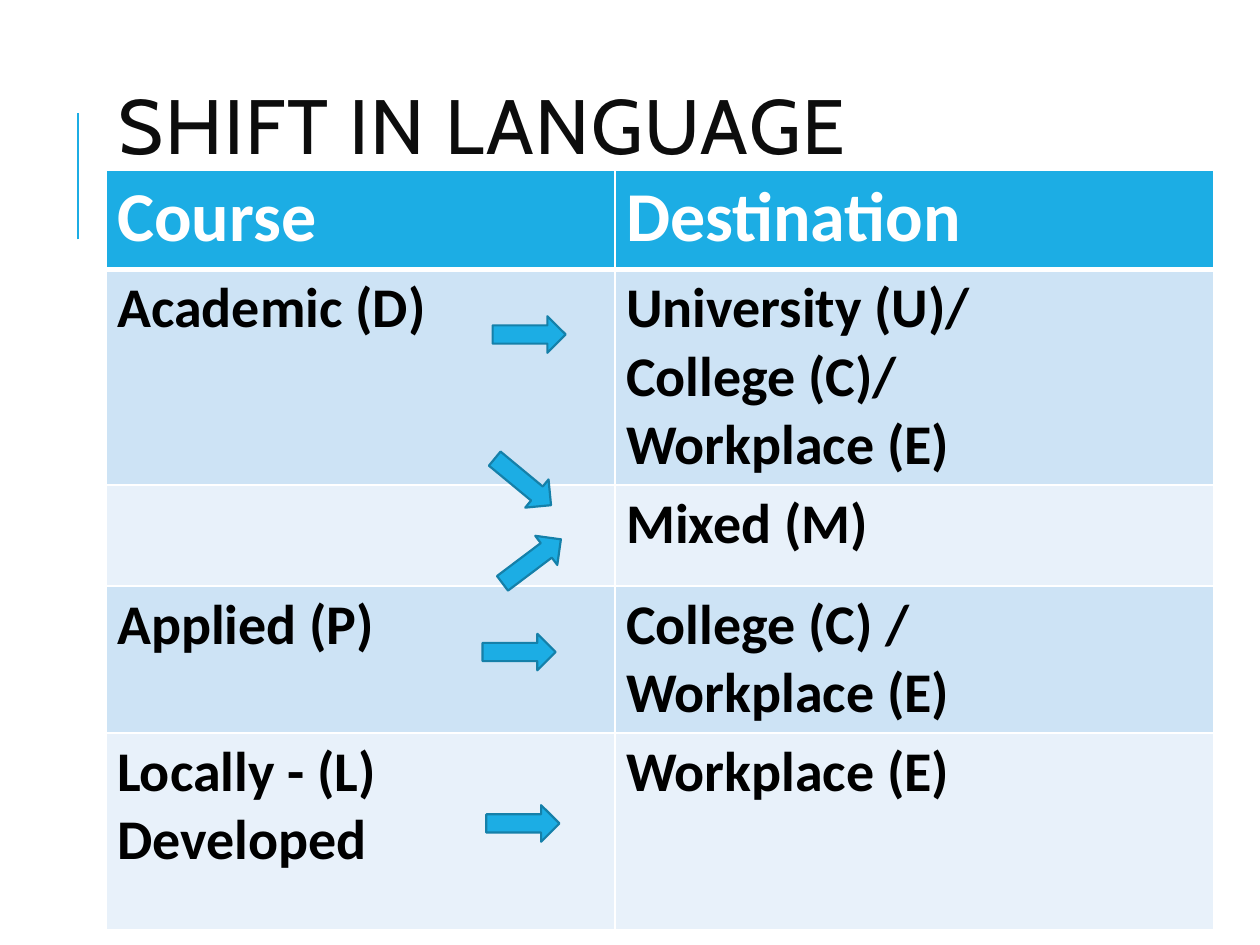
from dataclasses import dataclass

from lxml import etree
from pptx import Presentation
from pptx.dml.color import RGBColor
from pptx.enum.shapes import MSO_CONNECTOR, MSO_SHAPE
from pptx.enum.text import MSO_ANCHOR, PP_ALIGN
from pptx.oxml.ns import qn
from pptx.util import Inches, Pt

STRAIGHT = MSO_CONNECTOR.STRAIGHT
RIGHT_ARROW = MSO_SHAPE.RIGHT_ARROW
MIDDLE = MSO_ANCHOR.MIDDLE
LEFT = PP_ALIGN.LEFT
TITLE_ONLY = 5


@dataclass(frozen=True)
class Theme:
    accent: str = "1CADE4"
    arrow_outline: str = "1580A9"
    title_text: str = "0D0D0D"
    body_text: str = "000000"
    white: str = "FFFFFF"
    bands: tuple = ("CDE3F5", "E8F1FA")
    title_font: str = "Cabin"
    table_font: str = "Calibri"
    title_size: int = 44
    header_size: int = 40
    body_size: int = 32


class SlideBuilder:
    def __init__(self, slide, theme):
        self.slide = slide
        self.theme = theme

    def style_runs(self, paragraph, font, size, color, bold=False):
        for run in paragraph.runs:
            run.font.name = font
            run.font.size = Pt(size)
            run.font.bold = bold
            run.font.color.rgb = RGBColor.from_string(color)

    def title(self, text, left, top, width, height):
        shape = self.slide.shapes.title
        shape.left, shape.top = Inches(left), Inches(top)
        shape.width, shape.height = Inches(width), Inches(height)
        text_frame = shape.text_frame
        text_frame.text = text
        text_frame.word_wrap = True
        text_frame.vertical_anchor = MIDDLE
        paragraph = text_frame.paragraphs[0]
        paragraph.alignment = LEFT
        paragraph.line_spacing = 0.8
        self.style_runs(paragraph, self.theme.title_font,
                        self.theme.title_size, self.theme.title_text)
        for run in paragraph.runs:
            run.font._element.set("spc", "100")

    def rule(self, x, top, bottom):
        connector = self.slide.shapes.add_connector(
            STRAIGHT, Inches(x), Inches(bottom), Inches(x), Inches(top))
        connector.line.color.rgb = RGBColor.from_string(self.theme.accent)
        connector.line.width = Pt(1.5)
        etree.SubElement(connector._element.spPr, qn("a:effectLst"))

    def cell_borders(self, cell, bottom_width, top_width):
        properties = cell._tc.get_or_add_tcPr()
        widths = {"a:lnL": 1, "a:lnR": 1, "a:lnT": top_width, "a:lnB": bottom_width}
        for position, (tag, width) in enumerate(widths.items()):
            line = etree.Element(qn(tag), w=str(Pt(width)))
            fill = etree.SubElement(line, qn("a:solidFill"))
            etree.SubElement(fill, qn("a:srgbClr"), val=self.theme.white)
            properties.insert(position, line)

    def table(self, rows, left, top, column_widths, row_heights):
        theme = self.theme
        table = self.slide.shapes.add_table(
            len(rows), len(column_widths), Inches(left), Inches(top),
            Inches(sum(column_widths)), Inches(sum(row_heights))).table
        for column, width in zip(table.columns, column_widths):
            column.width = Inches(width)
        for row, height in zip(table.rows, row_heights):
            row.height = Inches(height)
        for row_index, texts in enumerate(rows):
            header = row_index == 0
            background = theme.accent if header else theme.bands[(row_index - 1) % 2]
            size = theme.header_size if header else theme.body_size
            color = theme.white if header else theme.body_text
            for column_index, text in enumerate(texts):
                cell = table.cell(row_index, column_index)
                cell.text_frame.text = text
                cell.margin_left = cell.margin_right = Inches(0.09)
                cell.margin_top = cell.margin_bottom = Inches(0.04)
                cell.fill.solid()
                cell.fill.fore_color.rgb = RGBColor.from_string(background)
                self.cell_borders(cell, 3 if header else 1, 3 if row_index == 1 else 1)
                for paragraph in cell.text_frame.paragraphs:
                    self.style_runs(paragraph, theme.table_font, size, color, True)

    def arrow(self, left, top, rotation=0):
        shape = self.slide.shapes.add_shape(
            RIGHT_ARROW, Inches(left), Inches(top), Inches(0.58), Inches(0.29))
        shape.rotation = rotation
        shape.shadow.inherit = False
        shape.fill.solid()
        shape.fill.fore_color.rgb = RGBColor.from_string(self.theme.accent)
        shape.line.color.rgb = RGBColor.from_string(self.theme.arrow_outline)
        shape.line.width = Pt(1.25)


def main():
    presentation = Presentation()
    presentation.slide_width = Inches(10)
    presentation.slide_height = Inches(7.5)
    slide = presentation.slides.add_slide(presentation.slide_layouts[TITLE_ONLY])
    builder = SlideBuilder(slide, Theme())

    builder.rule(0.62, 0.9, 1.9)
    builder.title("SHIFT IN LANGUAGE", 0.84, 0.23, 7.97, 1.64)
    courses = [
        ("Course", "Destination"),
        ("Academic (D)", "University (U)/\nCollege (C)/\nWorkplace (E)"),
        ("", "Mixed (M)"),
        ("Applied (P)", "College (C) /\nWorkplace (E)"),
        ("Locally - (L)\nDeveloped", "Workplace (E)"),
    ]
    builder.table(courses, 0.84, 1.35, (4.04, 4.75), (0.79, 1.59, 0.8, 1.09, 1.56))
    arrows = [
        (3.86, 3.68, 39.6),
        (3.83, 5.03, 0),
        (3.91, 2.51, 0),
        (3.86, 6.39, 0),
        (3.93, 4.31, 323),
    ]
    for left, top, rotation in arrows:
        builder.arrow(left, top, rotation)

    presentation.save("out.pptx")


if __name__ == "__main__":
    main()
